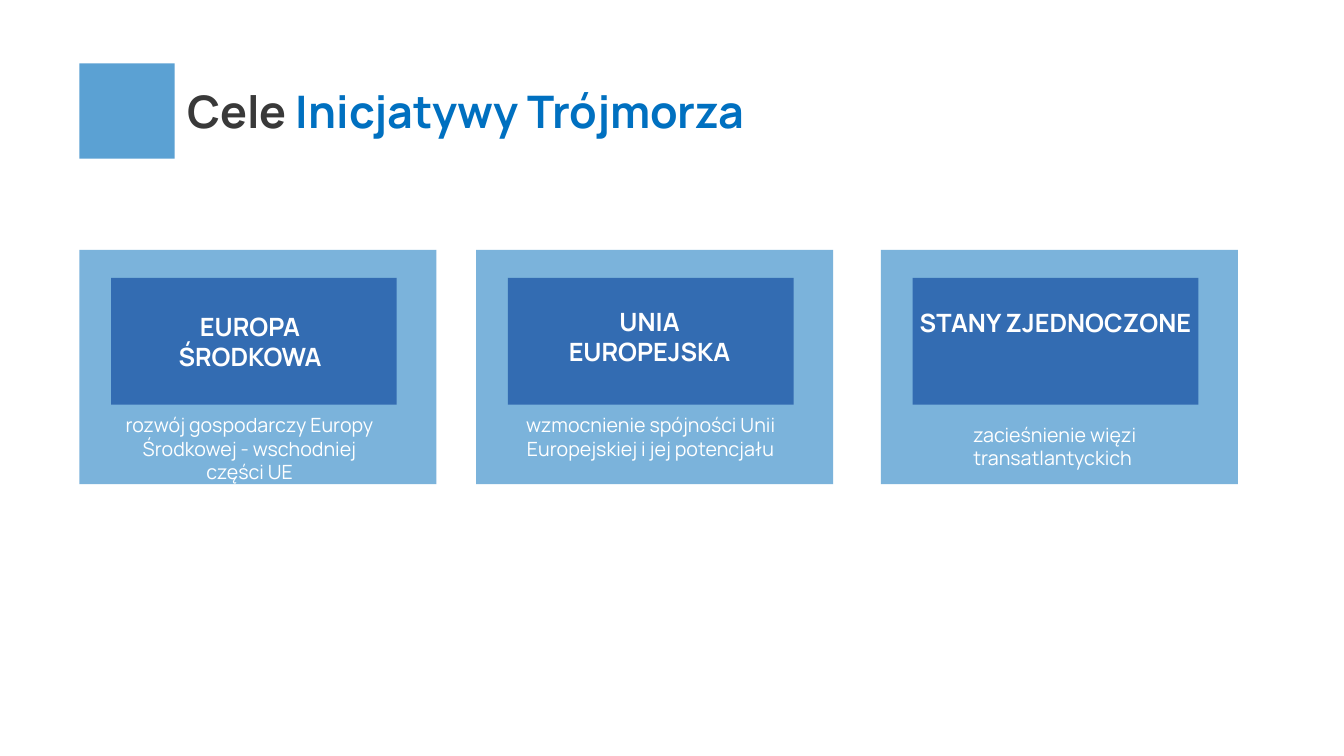
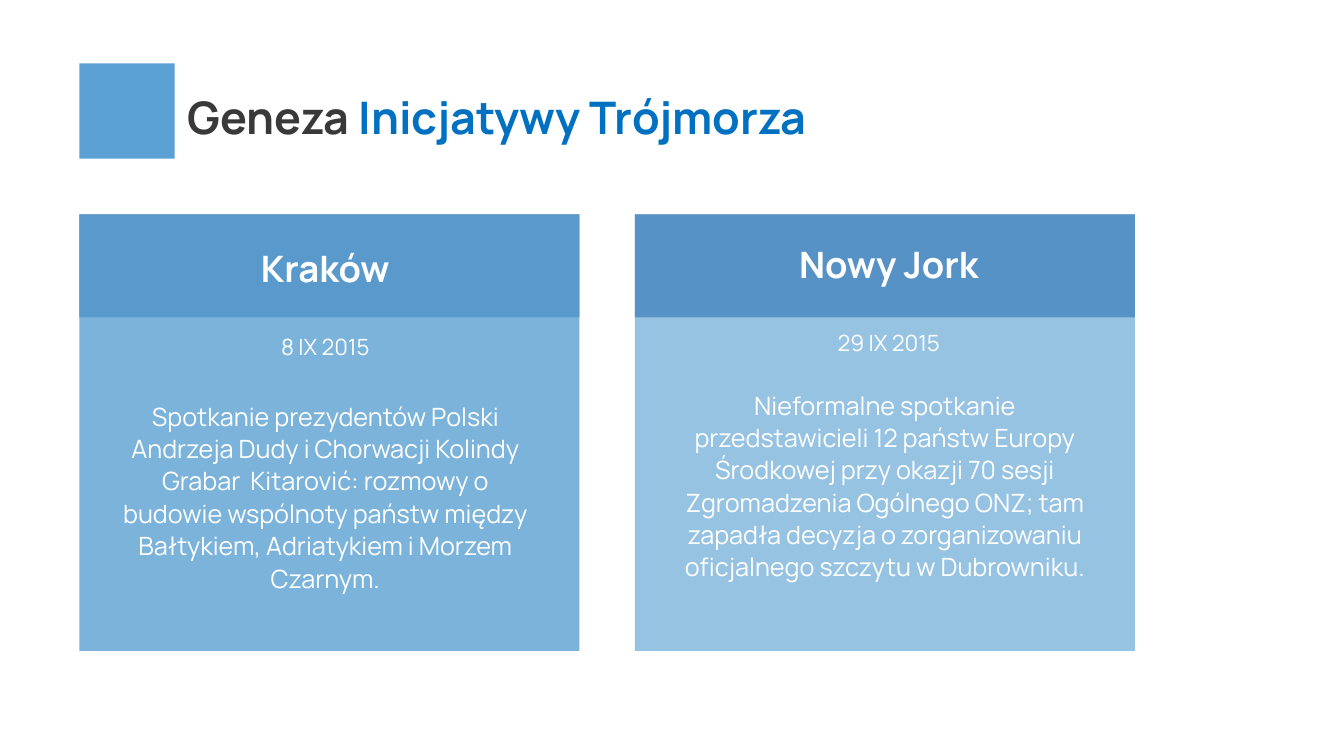
from pptx import Presentation
from pptx.dml.color import RGBColor
from pptx.enum.shapes import MSO_SHAPE
from pptx.enum.text import PP_ALIGN
from pptx.oxml.ns import qn
from pptx.util import Cm, Pt
from lxml.etree import SubElement

FONT = "Manrope"
COLORS = {
    "sky": "5BA1D3",
    "navy": "0B449B",
    "steel": "3465A4",
    "title": "393939",
    "accent": "0070C0",
    "white": "FFFFFF",
}

# All positions and sizes are in centimetres.
MARGIN = 2
TITLE_SUBJECT = "Inicjatywy Trójmorza"
LINE_SPACING = 1.07

GOAL_TOP, GOAL_WIDTH, GOAL_HEIGHT = 6.3, 9, 5.9
PLATE_INSET, PLATE_TOP, PLATE_WIDTH, PLATE_HEIGHT = 0.8, 7, 7.2, 3.2
GOALS = [
    {"left": 2, "label": "EUROPA ŚRODKOWA", "label_box": (3.8, 7.72, 5, 1.8),
     "text": "rozwój gospodarczy Europy Środkowej - wschodniej części UE",
     "text_box": (2.64, 10.29, 7.3, 2.8), "align": PP_ALIGN.CENTER},
    {"left": 12, "label": "UNIA EUROPEJSKA", "label_box": (13.87, 7.6, 5, 1.8),
     "text": "wzmocnienie spójności Unii Europejskiej i jej potencjału",
     "text_box": (12.8, 10.29, 7.2, 2.8), "align": PP_ALIGN.CENTER},
    {"left": 22.2, "label": "STANY ZJEDNOCZONE", "label_box": (22.9, 7.62, 7.4, 1.8),
     "text": "zacieśnienie więzi transatlantyckich",
     "text_box": (24.28, 10.53, 7.6, 2.2), "align": PP_ALIGN.LEFT},
]

MEETING_TOP, MEETING_WIDTH, MEETING_HEIGHT, HEADER_HEIGHT = 5.4, 12.6, 11, 2.6
MEETING_GAP = 1.4
MEETINGS = [
    {"city": "Kraków", "date": "8 IX 2015", "opacity": 80,
     "heading_box": (2.8, 6, 10.8, 3.2), "text_box": (2.8, 9.93, 10.8, 5.1),
     "text": "Spotkanie prezydentów Polski Andrzeja Dudy i Chorwacji Kolindy "
             "Grabar  Kitarović: rozmowy o budowie wspólnoty państw między "
             "Bałtykiem, Adriatykiem i Morzem Czarnym."},
    {"city": "Nowy Jork", "date": "29 IX 2015", "opacity": 63,
     "heading_box": (17, 5.9, 10.8, 3.2), "text_box": (16.6, 9.65, 11.4, 6),
     "text": "Nieformalne spotkanie\vprzedstawicieli 12 państw Europy Środkowej "
             "przy okazji 70 sesji Zgromadzenia Ogólnego ONZ; tam zapadła decyzja "
             "o zorganizowaniu oficjalnego szczytu w Dubrowniku."},
]


def add_rectangle(slide, box, color, opacity=100):
    shape = slide.shapes.add_shape(MSO_SHAPE.RECTANGLE, *map(Cm, box))
    shape.shadow.inherit = False
    shape.line.fill.background()
    shape.fill.solid()
    shape.fill.fore_color.rgb = RGBColor.from_string(COLORS[color])
    if opacity < 100:
        fill_color = shape.element.spPr.find(".//" + qn("a:srgbClr"))
        SubElement(fill_color, qn("a:alpha"), val=str(opacity * 1000))


def style_font(font, size, color="white", bold=False):
    font.name = FONT
    font.size = Pt(size)
    font.bold = bold
    font.color.rgb = RGBColor.from_string(COLORS[color])


def add_text(slide, box, text, size, bold=False, align=PP_ALIGN.CENTER, spacing=None):
    """Add a wrapped white text box and return its text frame."""
    text_frame = slide.shapes.add_textbox(*map(Cm, box)).text_frame
    text_frame.word_wrap = True
    text_frame.text = text
    for paragraph in text_frame.paragraphs:
        paragraph.alignment = align
        paragraph.line_spacing = spacing
        for run in paragraph.runs:
            style_font(run.font, size, bold=bold)
    return text_frame


def add_title(slide, topic, top):
    add_rectangle(slide, (MARGIN, 1.6, 2.4, 2.4), "sky")
    text_frame = add_text(slide, (4.47, top, 29.4, 1.63), topic + " ", 32,
                          align=PP_ALIGN.LEFT)
    paragraph = text_frame.paragraphs[0]
    paragraph.add_run().text = TITLE_SUBJECT
    for run, color in zip(paragraph.runs, ("title", "accent")):
        style_font(run.font, 32, color, bold=True)


def add_goal(slide, goal):
    left = goal["left"]
    add_rectangle(slide, (left, GOAL_TOP, GOAL_WIDTH, GOAL_HEIGHT), "sky", 80)
    add_rectangle(slide, (left + PLATE_INSET, PLATE_TOP, PLATE_WIDTH, PLATE_HEIGHT),
                  "navy", 64)
    add_text(slide, goal["label_box"], goal["label"], 18, bold=True)
    add_text(slide, goal["text_box"], goal["text"], 14, align=goal["align"])


def add_meeting(slide, left, meeting):
    add_rectangle(slide, (left, MEETING_TOP, MEETING_WIDTH, HEADER_HEIGHT), "steel", 85)
    add_rectangle(slide, (left, MEETING_TOP, MEETING_WIDTH, MEETING_HEIGHT),
                  "sky", meeting["opacity"])
    heading = add_text(slide, meeting["heading_box"], meeting["city"], 26, bold=True,
                       spacing=LINE_SPACING)
    heading.paragraphs[0].space_after = Pt(14.8)
    date = heading.add_paragraph()
    date.text = meeting["date"]
    date.alignment = PP_ALIGN.CENTER
    date.line_spacing = LINE_SPACING
    date.space_before = Pt(14.8)
    style_font(date.runs[0].font, 16)
    add_text(slide, meeting["text_box"], meeting["text"], 18, spacing=LINE_SPACING)


def main():
    presentation = Presentation()
    presentation.slide_width, presentation.slide_height = Cm(33.87), Cm(19.05)
    blank = presentation.slide_layouts[6]

    goals_slide = presentation.slides.add_slide(blank)
    add_title(goals_slide, "Cele", 1.98)
    for goal in GOALS:
        add_goal(goals_slide, goal)

    origins_slide = presentation.slides.add_slide(blank)
    add_title(origins_slide, "Geneza", 2.13)
    for index, meeting in enumerate(MEETINGS):
        left = MARGIN + index * (MEETING_WIDTH + MEETING_GAP)
        add_meeting(origins_slide, left, meeting)

    presentation.save("out.pptx")


if __name__ == "__main__":
    main()
